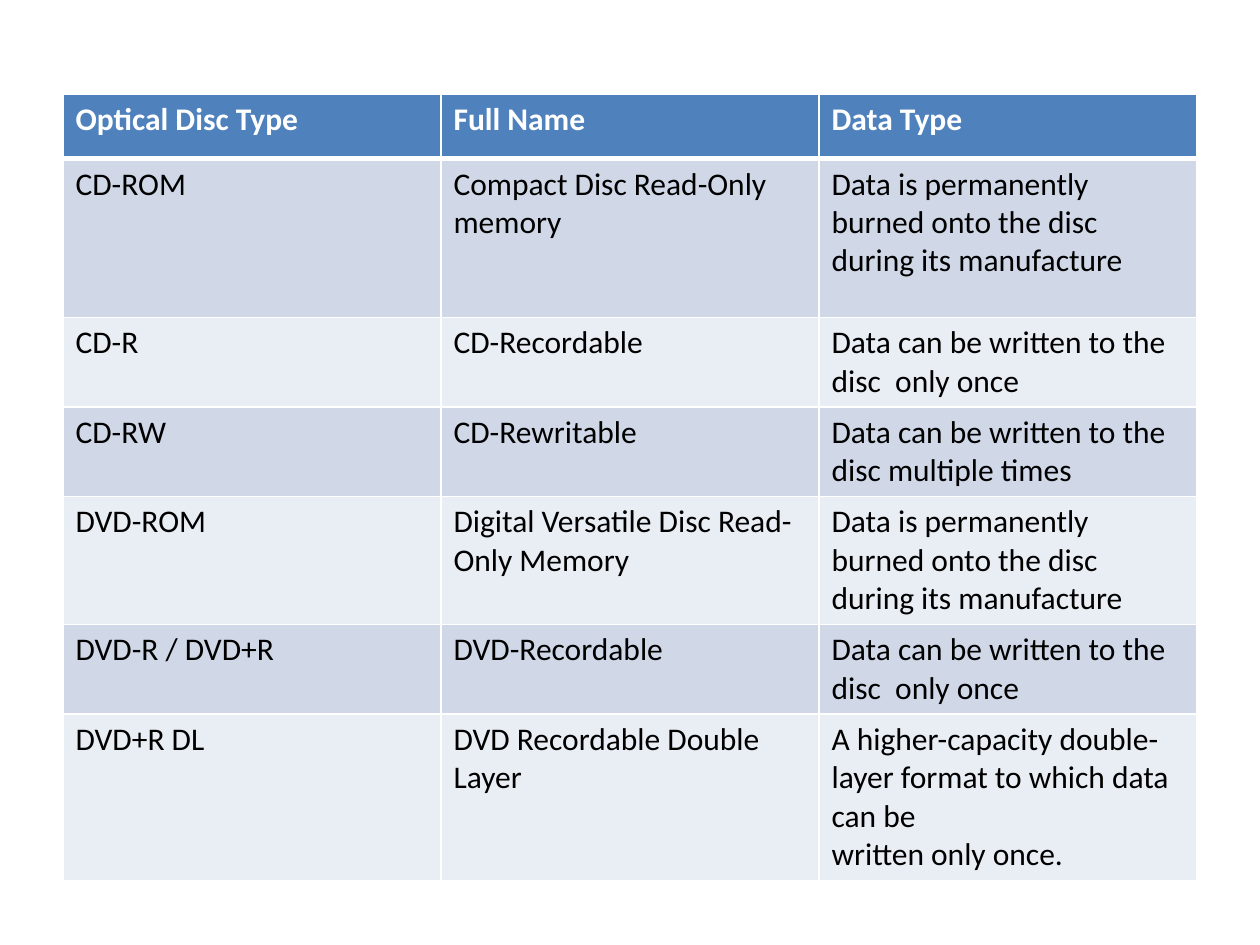
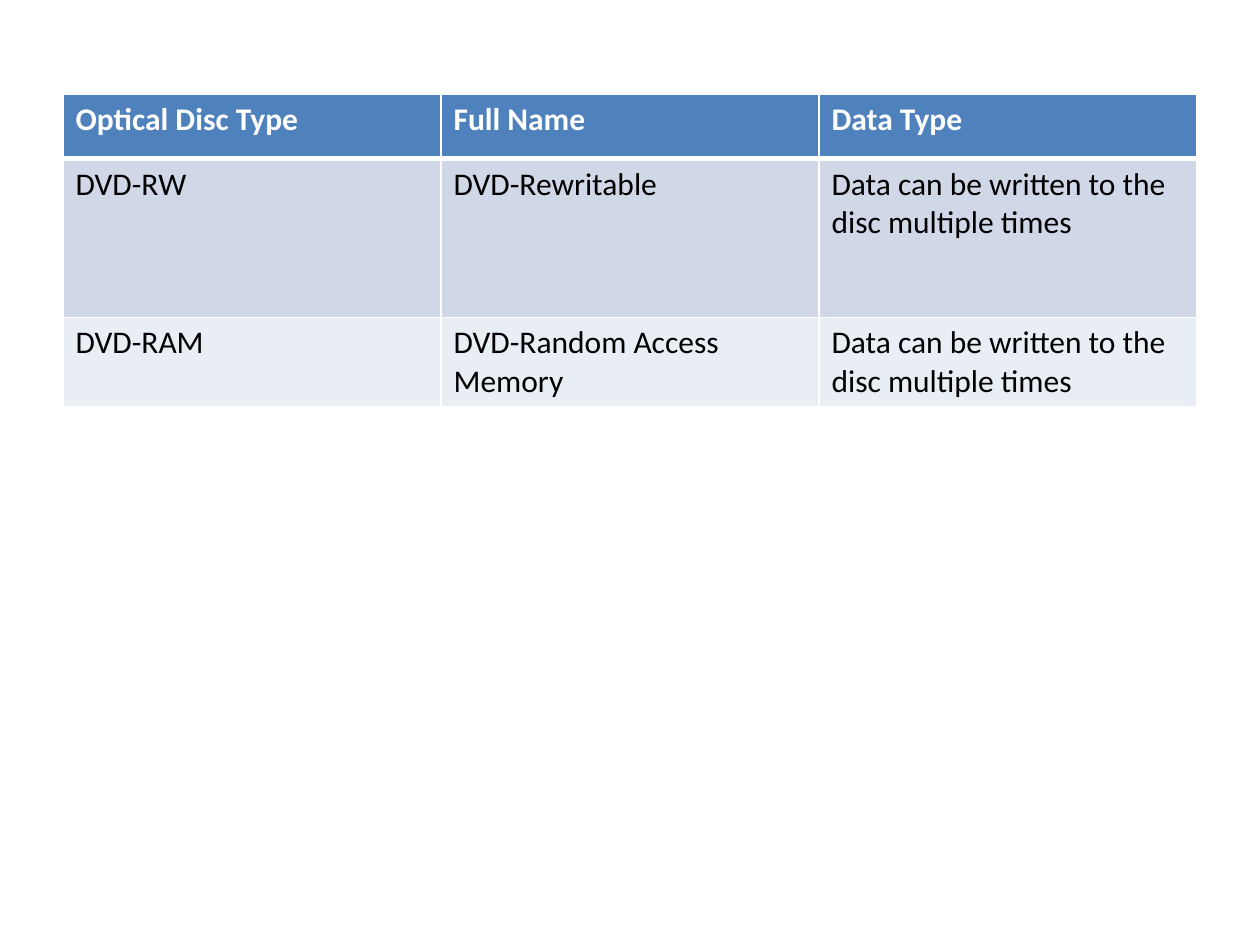
from lxml import etree
from pptx import Presentation
from pptx.dml.color import RGBColor
from pptx.oxml import ns
from pptx.util import Pt

WHITE = RGBColor(0xFF, 0xFF, 0xFF)
BLACK = RGBColor(0x00, 0x00, 0x00)
HEADER_BLUE = RGBColor(0x4F, 0x81, 0xBD)
BANDS = [RGBColor(0xD0, 0xD8, 0xE8), RGBColor(0xE9, 0xED, 0xF4)]

COLUMN_WIDTH = 216
ROW_HEIGHT = 36.72
FIRST_DISC_HEIGHT = 90.72

HEADINGS = ("Optical Disc Type", "Full Name", "Data Type")
PERMANENT = "Data is permanently burned onto the disc during its manufacture"
ONCE = "Data can be written to the disc  only once"
REWRITABLE = "Data can be written to the disc multiple times"

DISC_PAGES = [
    [
        ("CD-ROM", "Compact Disc Read-Only memory", PERMANENT),
        ("CD-R", "CD-Recordable", ONCE),
        ("CD-RW", "CD-Rewritable", REWRITABLE),
        ("DVD-ROM", "Digital Versatile Disc Read-Only Memory", PERMANENT),
        ("DVD-R / DVD+R", "DVD-Recordable", ONCE),
        ("DVD+R DL", "DVD Recordable Double Layer",
         "A higher-capacity double-layer format to which data can be\nwritten only once."),
    ],
    [
        ("DVD-RW", "DVD-Rewritable", REWRITABLE),
        ("DVD-RAM", "DVD-Random Access Memory", REWRITABLE),
    ],
]


def write_text(frame, text, size=18, color=BLACK, bold=False, font="Calibri"):
    frame.text = text
    for para in frame.paragraphs:
        for span in para.runs:
            span.font.name = font
            span.font.size = Pt(size)
            span.font.bold = bold
            span.font.color.rgb = color


def draw_borders(cell, top, bottom):
    properties = cell._tc.get_or_add_tcPr()
    for side, width in (("L", 1), ("R", 1), ("T", top), ("B", bottom)):
        line = etree.SubElement(properties, ns.qn(f"a:ln{side}"), w=str(Pt(width)))
        fill = etree.SubElement(line, ns.qn("a:solidFill"))
        etree.SubElement(fill, ns.qn("a:srgbClr"), val=str(WHITE))


deck = Presentation()
deck.slide_width = Pt(720)
deck.slide_height = Pt(540)

for discs in DISC_PAGES:
    page = deck.slides.add_slide(deck.slide_layouts[6])
    rows = [HEADINGS, *discs]
    box = page.shapes.add_table(
        len(rows), len(HEADINGS), Pt(36), Pt(54),
        Pt(COLUMN_WIDTH * len(HEADINGS)), Pt(ROW_HEIGHT * len(rows)))
    table = box.table
    for column in table.columns:
        column.width = Pt(COLUMN_WIDTH)

    for row_index, values in enumerate(rows):
        is_header = row_index == 0
        table.rows[row_index].height = Pt(FIRST_DISC_HEIGHT if row_index == 1 else ROW_HEIGHT)
        for column_index, value in enumerate(values):
            cell = table.cell(row_index, column_index)
            draw_borders(cell, top=3 if row_index == 1 else 1, bottom=3 if is_header else 1)
            cell.fill.solid()
            cell.fill.fore_color.rgb = HEADER_BLUE if is_header else BANDS[(row_index - 1) % 2]
            write_text(cell.text_frame, value, color=WHITE if is_header else BLACK, bold=is_header)

deck.save("out.pptx")
